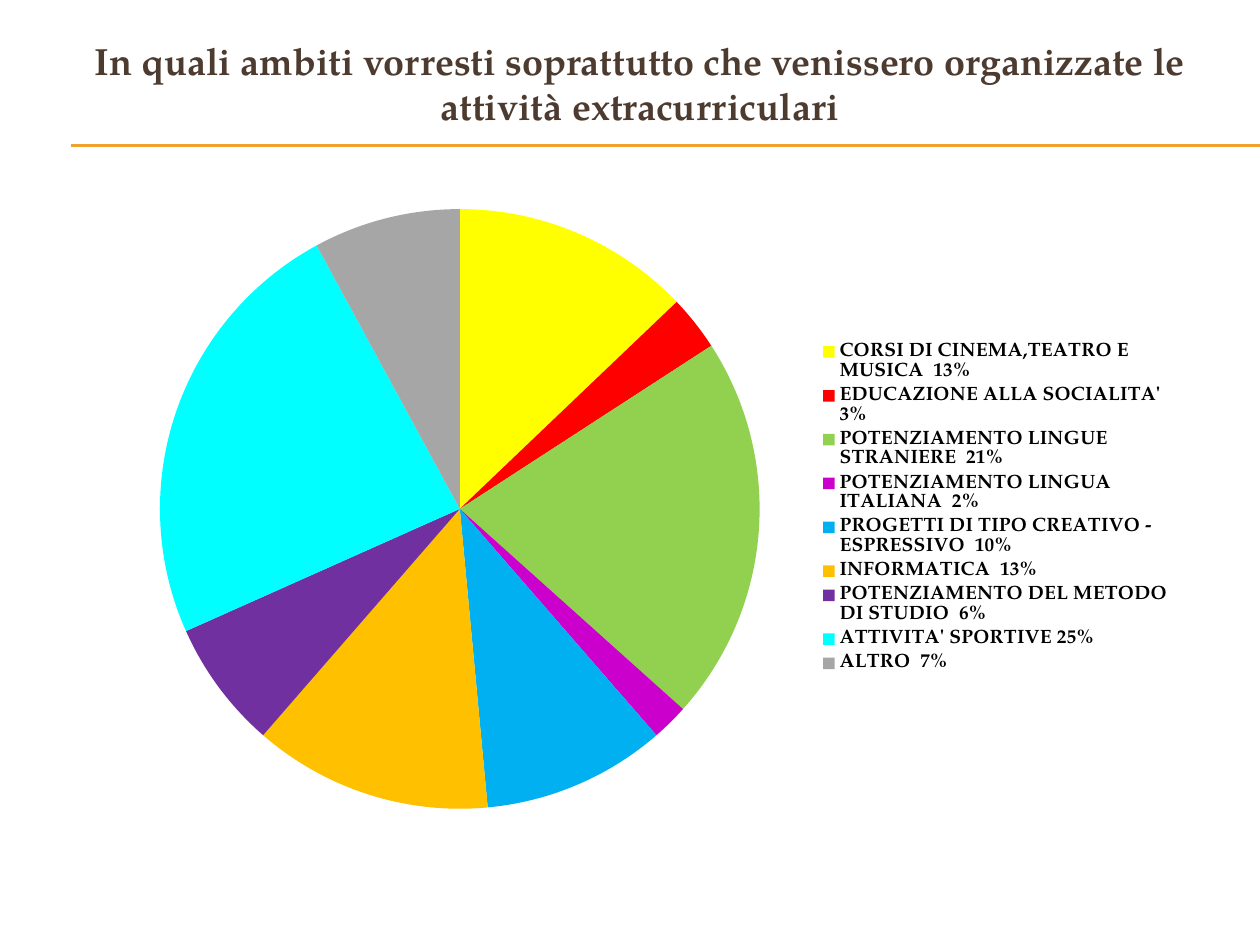
import pptx
import pptx.chart.data
import pptx.dml.color
import pptx.enum.chart
import pptx.enum.shapes
import pptx.enum.text
import pptx.oxml
import pptx.oxml.ns
import pptx.util
from pptx.util import Inches

FONT = "TeX Gyre Pagella"
TITLE = ("In quali ambiti vorresti soprattutto che venissero organizzate "
         "le attività extracurriculari")
AREAS = [
    ("CORSI DI CINEMA,TEATRO E MUSICA  13%", 13, "FFFF00"),
    ("EDUCAZIONE ALLA SOCIALITA'  3%", 3, "FF0000"),
    ("POTENZIAMENTO LINGUE STRANIERE  21%", 21, "92D050"),
    ("POTENZIAMENTO LINGUA ITALIANA  2%", 2, "CC00CC"),
    ("PROGETTI DI TIPO CREATIVO - ESPRESSIVO  10%", 10, "00B0F0"),
    ("INFORMATICA  13%", 13, "FFC000"),
    ("POTENZIAMENTO DEL METODO DI STUDIO  6%", 7, "7030A0"),
    ("ATTIVITA' SPORTIVE 25%", 24, "00FFFF"),
    ("ALTRO  7%", 8, "A6A6A6"),
]
CHART_BOX = (0.78, 1.53, 8.59, 5.03)
PIE_BOX = (1.27, 1.66, 4.76, 4.76)
LEGEND_BOX = (6.5, 2.68, 2.8, 2.7)


def color(hex_code):
    return pptx.dml.color.RGBColor.from_string(hex_code)


def style(font, size, hex_code, bold=False):
    font.name = FONT
    font.size = pptx.util.Pt(size)
    font.color.rgb = color(hex_code)
    font.bold = bold


def place(part, box, position, inner=False):
    """Fix a chart part at a slide box, as fractions of the chart frame."""
    for old in part.findall(pptx.oxml.ns.qn("c:layout")):
        part.remove(old)
    left, top, width, height = CHART_BOX
    fractions = {"x": (box[0] - left) / width, "y": (box[1] - top) / height,
                 "w": box[2] / width, "h": box[3] / height}
    target = '<c:layoutTarget val="inner"/>' if inner else ""
    modes = '<c:xMode val="edge"/><c:yMode val="edge"/>'
    sizes = "".join(f'<c:{key} val="{value:.4f}"/>' for key, value in fractions.items())
    part.insert(position, pptx.oxml.parse_xml(
        f'<c:layout {pptx.oxml.ns.nsdecls("c")}><c:manualLayout>'
        f'{target}{modes}{sizes}</c:manualLayout></c:layout>'))


def add_rule(slide, y):
    rule = slide.shapes.add_connector(
        pptx.enum.shapes.MSO_CONNECTOR.STRAIGHT,
        Inches(0.56), Inches(y), Inches(10), Inches(y))
    rule.line.color.rgb = color("F0A22E")
    rule.line.width = pptx.util.Pt(0.75)
    rule._element.spPr.append(pptx.oxml.parse_xml(
        f'<a:effectLst {pptx.oxml.ns.nsdecls("a")}/>'))


def add_title(slide):
    title = slide.shapes.add_textbox(*map(Inches, (0.33, 0.23, 9.5, 0.86)))
    frame = title.text_frame
    frame.word_wrap = True
    frame.vertical_anchor = pptx.enum.text.MSO_ANCHOR.MIDDLE
    frame.text = TITLE
    paragraph = frame.paragraphs[0]
    paragraph.alignment = pptx.enum.text.PP_ALIGN.CENTER
    style(paragraph.runs[0].font, 21.6, "4E3B30", bold=True)


def add_pie(slide):
    data = pptx.chart.data.CategoryChartData()
    data.categories = [name for name, _, _ in AREAS]
    data.add_series("Series 1", [value for _, value, _ in AREAS])
    chart = slide.shapes.add_chart(
        pptx.enum.chart.XL_CHART_TYPE.PIE, *map(Inches, CHART_BOX), data).chart
    chart.has_title = False
    style(chart.font, 18, "000000")
    for index, (_, _, fill) in enumerate(AREAS):
        slice_fill = chart.plots[0].series[0].points[index].format.fill
        slice_fill.solid()
        slice_fill.fore_color.rgb = color(fill)

    chart.has_legend = True
    chart.legend.position = pptx.enum.chart.XL_LEGEND_POSITION.RIGHT
    chart.legend.include_in_layout = True
    style(chart.legend.font, 11, "000000", bold=True)
    place(chart._chartSpace.xpath("//c:plotArea")[0], PIE_BOX, 0, inner=True)
    place(chart._chartSpace.xpath("//c:legend")[0], LEGEND_BOX, 1)


def main():
    deck = pptx.Presentation()
    deck.slide_width, deck.slide_height = Inches(10), Inches(7.5)
    slide = deck.slides.add_slide(deck.slide_layouts[6])
    for y in (1.15, 1.16):
        add_rule(slide, y)
    add_title(slide)
    add_pie(slide)
    deck.save("out.pptx")


if __name__ == "__main__":
    main()
